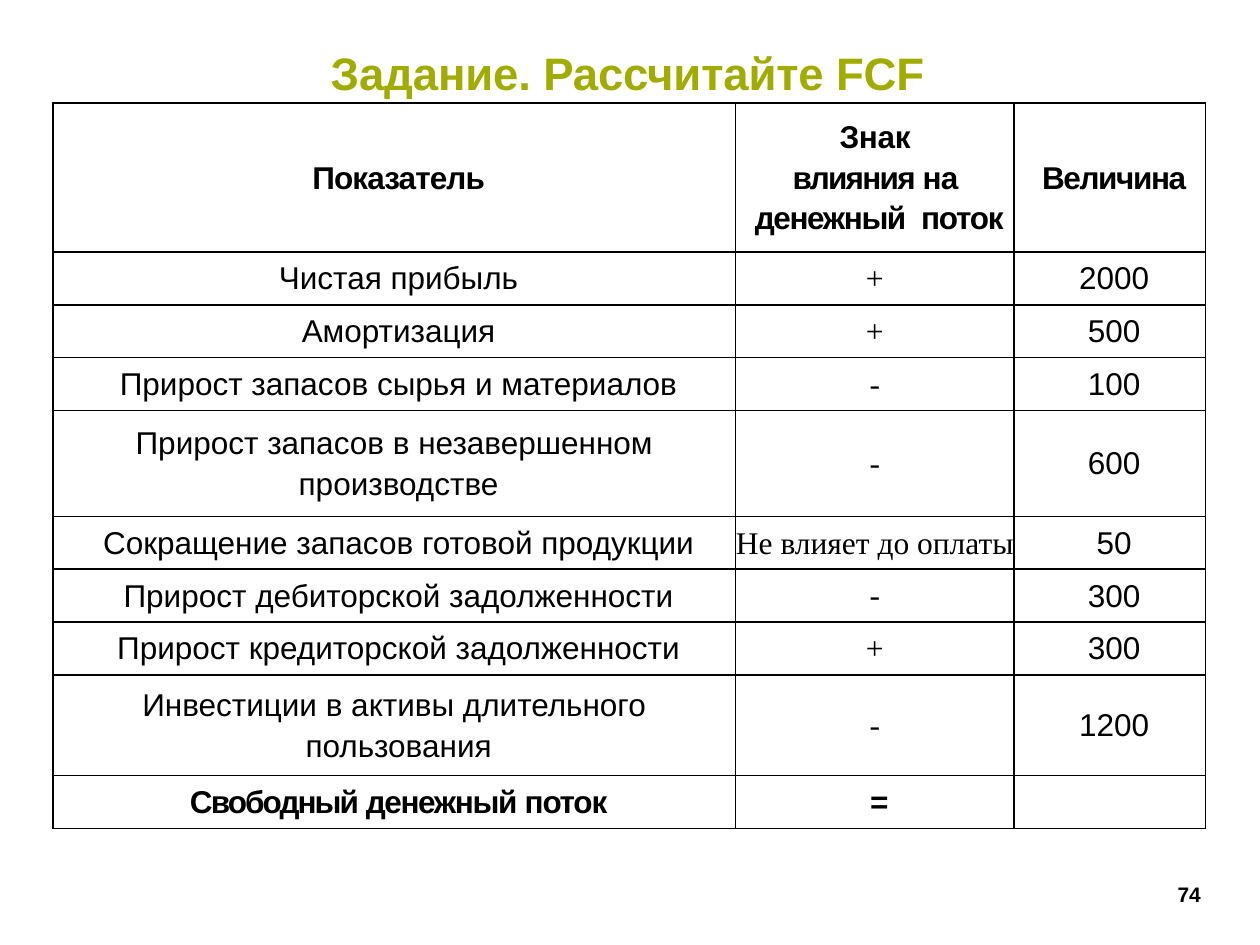
from lxml import etree
from pptx import Presentation
from pptx.dml.color import RGBColor
from pptx.enum.text import MSO_ANCHOR, MSO_AUTO_SIZE, PP_ALIGN
from pptx.oxml.ns import qn
from pptx.util import Pt

LEFT, CENTER = PP_ALIGN.LEFT, PP_ALIGN.CENTER
TOP, MIDDLE = MSO_ANCHOR.TOP, MSO_ANCHOR.MIDDLE
FIXED_SIZE = MSO_AUTO_SIZE.NONE

OLIVE = RGBColor(0xA1, 0xAC, 0x00)
BLACK = RGBColor(0, 0, 0)
WHITE = RGBColor(255, 255, 255)
SANS, SERIF = "Arial", "Times New Roman"

COLUMN_WIDTHS = (390.2, 159.1, 109.4)
LINE_ROW = 30.2
ROW_HEIGHTS = (85, *[LINE_ROW] * 3, 60.5, *[LINE_ROW] * 3, 57.6, LINE_ROW)

# A cell is a list of paragraphs; a paragraph is a list of (text, letter spacing).
HEADINGS = (
    [[("Показатель", -0.5)]],
    [[("Знак ", -0.2)],
     [("влияния ", -1), ("на  ", -0.4), ("денежный  ", -0.8), ("поток", -0.7)]],
    [[("Величина", -0.8)]],
)
INDICATORS = (
    (["Чистая прибыль"], "+", "2000"),
    (["Амортизация"], "+", "500"),
    (["Прирост запасов сырья и материалов"], "-", "100"),
    (["Прирост запасов в незавершенном ", "производстве"], "-", "600"),
    (["Сокращение запасов готовой продукции"], "Не влияет до оплаты", "50"),
    (["Прирост дебиторской задолженности"], "-", "300"),
    (["Прирост кредиторской задолженности"], "+", "300"),
    (["Инвестиции в активы длительного ", "пользования"], "-", "1200"),
)
TOTAL = (
    [[("Свободный ", -1.1), ("денежный ", -0.8), ("поток", -0.7)]],
    [[("=", 0)]],
    [[]],
)


class SlideBuilder:
    def __init__(self, deck):
        self.slide = deck.slides.add_slide(deck.slide_layouts[5])

    def fill_paragraph(self, paragraph, spans, size=18, bold=False, color=BLACK,
                       font=SANS, align=CENTER, indent=5, before=0.7):
        """Fill a paragraph with (text, letter spacing) spans."""
        properties = paragraph._p.get_or_add_pPr()
        properties.set("marL", str(Pt(indent)))
        properties.set("indent", "0")
        paragraph.alignment = align
        paragraph.space_before = Pt(before)
        paragraph.font.name = font
        paragraph.font.size = Pt(size)
        paragraph.font.bold = bold
        paragraph.font.color.rgb = color
        for text, spacing in spans:
            span = paragraph.add_run()
            span.text = text
            if spacing:
                span._r.get_or_add_rPr().set("spc", str(round(spacing * 100)))

    def place(self, box, left, top, width, height):
        box.left, box.top = Pt(left), Pt(top)
        box.width, box.height = Pt(width), Pt(height)
        frame = box.text_frame
        frame.auto_size = FIXED_SIZE
        frame.word_wrap = False
        frame.vertical_anchor = TOP
        frame.margin_left = frame.margin_right = 0
        frame.margin_top = frame.margin_bottom = 0
        return frame.paragraphs[0]

    def title(self, text, *area):
        paragraph = self.place(self.slide.shapes.title, *area)
        self.fill_paragraph(paragraph, [(text, -0.1)], size=26, bold=True,
                            color=OLIVE, align=LEFT, indent=1, before=0)

    def page_number(self, text, *area):
        box = self.slide.shapes.add_textbox(0, 0, 0, 0)
        paragraph = self.place(box, *area)
        self.fill_paragraph(paragraph, [(text, -0.1)], size=12, bold=True,
                            align=LEFT, indent=2, before=0)
        paragraph.line_spacing = Pt(14.2)

    def table(self, left, top, widths, heights):
        table = self.slide.shapes.add_table(
            len(heights), len(widths), Pt(left), Pt(top),
            Pt(sum(widths)), Pt(sum(heights))).table
        table.first_row = table.horz_banding = False
        for column, width in zip(table.columns, widths):
            column.width = Pt(width)
        for row, height in zip(table.rows, heights):
            row.height = Pt(height)
        return table

    def cell(self, cell, paragraphs, wrapped_spacing=None, **style):
        cell.vertical_anchor = MIDDLE
        cell.margin_left = cell.margin_right = cell.margin_bottom = 0
        cell.margin_top = Pt(0.7)
        self.borders(cell)
        cell.fill.solid()
        cell.fill.fore_color.rgb = WHITE
        frame = cell.text_frame
        self.fill_paragraph(frame.paragraphs[0], paragraphs[0],
                            **{**style, "before": 0})
        for spans in paragraphs[1:]:
            paragraph = frame.add_paragraph()
            before = 0 if wrapped_spacing else 3.2
            self.fill_paragraph(paragraph, spans, **{**style, "before": before})
            if wrapped_spacing:
                paragraph.line_spacing = wrapped_spacing

    def borders(self, cell):
        properties = cell._tc.get_or_add_tcPr()
        for side in ("lnL", "lnR", "lnT", "lnB"):
            line = etree.SubElement(properties, qn(f"a:{side}"), w=str(Pt(1)))
            fill = etree.SubElement(line, qn("a:solidFill"))
            etree.SubElement(fill, qn("a:srgbClr"), val=str(BLACK))


def main():
    deck = Presentation()
    deck.slide_width, deck.slide_height = Pt(720), Pt(540)
    page = SlideBuilder(deck)
    page.title("Задание. Рассчитайте FCF", 188, 25.5, 344, 33)
    page.page_number("74", 671, 504, 17.3, 14.4)

    table = page.table(30.2, 59, COLUMN_WIDTHS, ROW_HEIGHTS)
    last_row = len(ROW_HEIGHTS) - 1
    for column, (heading, total) in enumerate(zip(HEADINGS, TOTAL)):
        page.cell(table.cell(0, column), heading, wrapped_spacing=1.15, bold=True)
        page.cell(table.cell(last_row, column), total, bold=True)
    for row, (label, sign, value) in enumerate(INDICATORS, start=1):
        page.cell(table.cell(row, 0), [[(line, 0)] for line in label])
        page.cell(table.cell(row, 1), [[(sign, 0)]], font=SERIF, indent=0)
        page.cell(table.cell(row, 2), [[(value, 0)]])
    deck.save("out.pptx")


if __name__ == "__main__":
    main()
